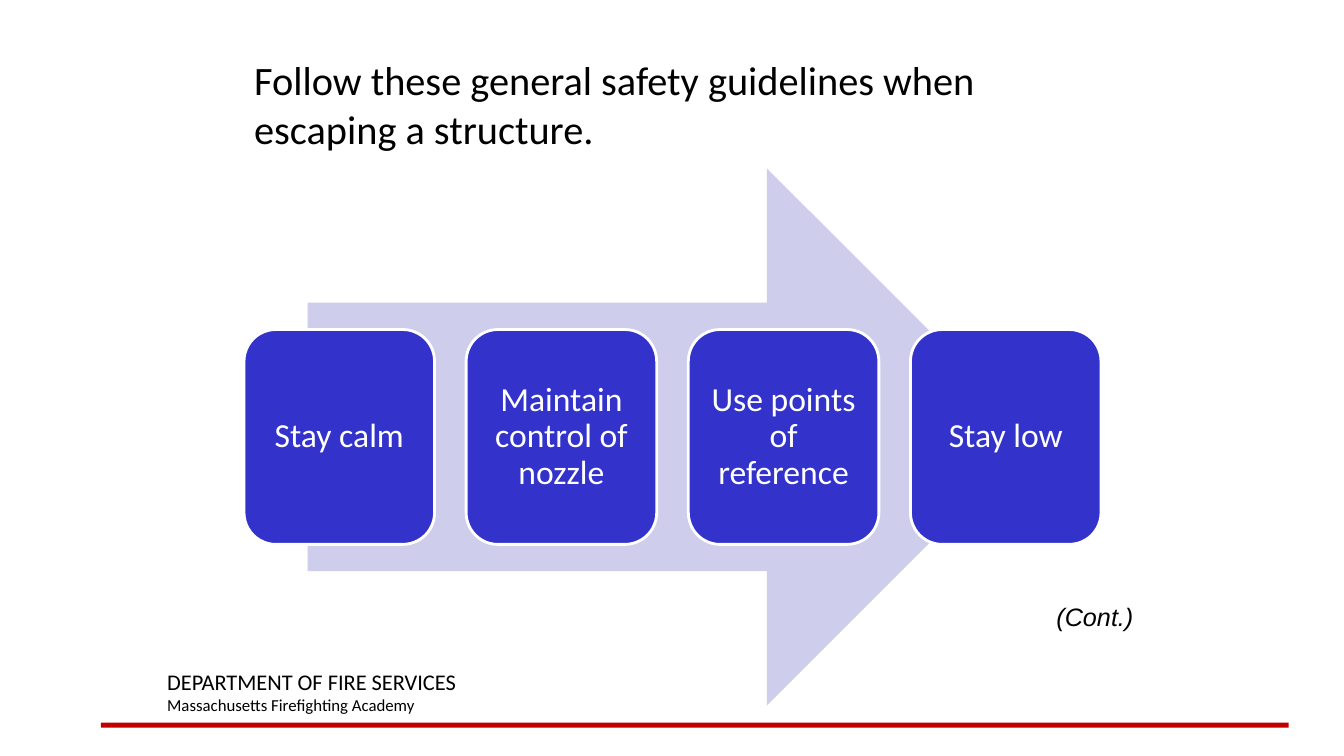
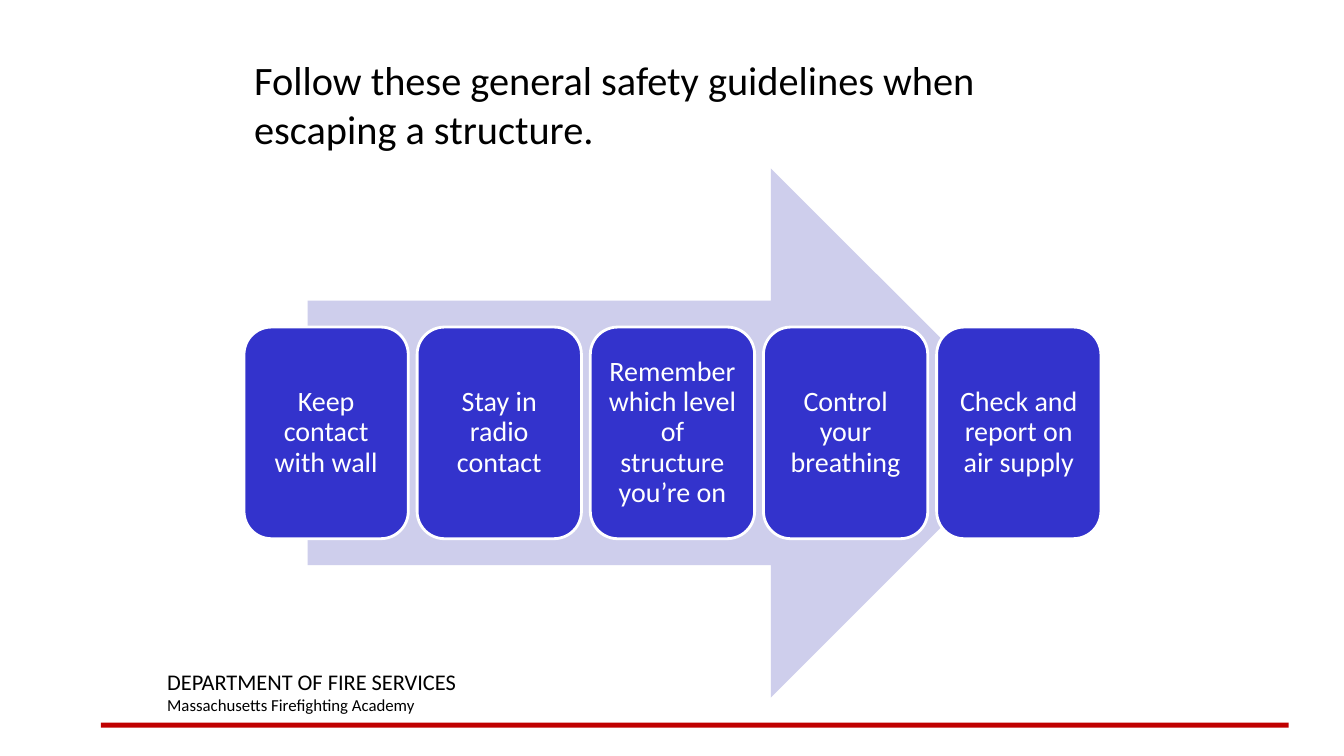
from dataclasses import dataclass

import pptx
import pptx.dml.color
import pptx.enum.shapes
import pptx.enum.text
import pptx.presentation
import pptx.shapes.autoshape
import pptx.slide
import pptx.text.text
import pptx.util

Inches = pptx.util.Inches
Pt = pptx.util.Pt
RGBColor = pptx.dml.color.RGBColor
Shape = pptx.enum.shapes.MSO_SHAPE
Align = pptx.enum.text.PP_ALIGN
Anchor = pptx.enum.text.MSO_ANCHOR
AutoSize = pptx.enum.text.MSO_AUTO_SIZE

BLACK = RGBColor(0x00, 0x00, 0x00)
WHITE = RGBColor(0xFF, 0xFF, 0xFF)
RED = RGBColor(0xC0, 0x00, 0x00)
BLUE = RGBColor(0x33, 0x33, 0xCC)
PALE_BLUE = RGBColor(0xCE, 0xCE, 0xEC)

BODY_FONT = "Calibri"
NOTE_FONT = "Arial"
TITLE = "Follow these general safety guidelines when escaping a structure."
TITLE_ONLY_LAYOUT = 5

ROW_LEFT = 2.42
ROW_WIDTH = 8.5
ARROW_LEFT = 3.05
ARROW_TOP = 1.67
ARROW_WIDTH = 7.22
STEP_HEIGHT_SHARE = 0.4


@dataclass(frozen=True)
class Process:
    """A row of steps, evenly spread over a wide arrow; lengths in inches."""

    steps: tuple[str, ...]
    arrow_height: float
    step_width: float
    inset: float
    font_size: float
    note: str = ""


PROCESSES = (
    Process(
        ("Stay calm", "Maintain control of nozzle", "Use points of reference", "Stay low"),
        arrow_height=5.33, step_width=1.89, inset=0.1, font_size=24, note="(Cont.)",
    ),
    Process(
        (
            "Keep contact with wall",
            "Stay in radio contact",
            "Remember which level of structure you’re on",
            "Control your breathing",
            "Check and report on air supply",
        ),
        arrow_height=5.25, step_width=1.63, inset=0.08, font_size=20,
    ),
)


def format_paragraph(
    para: pptx.text.text._Paragraph,
    size: float,
    color: RGBColor = BLACK,
    font: str = BODY_FONT,
    align: Align = Align.LEFT,
    italic: bool = False,
) -> None:
    para.alignment = align
    for span in para.runs:
        span.font.name = font
        span.font.size = Pt(size)
        span.font.color.rgb = color
        span.font.italic = italic


def add_filled_shape(
    slide: pptx.slide.Slide,
    kind: Shape,
    left: float,
    top: float,
    width: float,
    height: float,
    fill: RGBColor,
) -> pptx.shapes.autoshape.Shape:
    """Add a shape without outline or shadow."""
    shape = slide.shapes.add_shape(
        kind, Inches(left), Inches(top), Inches(width), Inches(height)
    )
    shape.shadow.inherit = False
    shape.fill.solid()
    shape.fill.fore_color.rgb = fill
    shape.line.fill.background()
    return shape


def add_text_box(
    slide: pptx.slide.Slide, left: float, top: float, width: float, height: float, text: str
) -> pptx.text.text.TextFrame:
    box = slide.shapes.add_textbox(
        Inches(left), Inches(top), Inches(width), Inches(height)
    )
    box.text_frame.word_wrap = True
    box.text_frame.text = text
    return box.text_frame


def add_footer(slide: pptx.slide.Slide) -> None:
    add_filled_shape(slide, Shape.RECTANGLE, 1, 7.17, 11.78, 0.05, RED)
    frame = add_text_box(
        slide, 1.56, 6.58, 5.67, 0.57,
        "DEPARTMENT OF FIRE SERVICES\nMassachusetts Firefighting Academy",
    )
    for para, size in zip(frame.paragraphs, (16, 12)):
        format_paragraph(para, size)


def set_title(slide: pptx.slide.Slide) -> None:
    title = slide.shapes.title
    title.left, title.top = Inches(ROW_LEFT), Inches(0.5)
    title.width, title.height = Inches(8.75), Inches(1)
    frame = title.text_frame
    frame.text = TITLE
    frame.word_wrap = True
    frame.auto_size = AutoSize.NONE
    frame.vertical_anchor = Anchor.TOP
    format_paragraph(frame.paragraphs[0], 28.8)


def add_step(
    slide: pptx.slide.Slide, process: Process, text: str, left: float, top: float, height: float
) -> None:
    box = add_filled_shape(
        slide, Shape.ROUNDED_RECTANGLE, left, top, process.step_width, height, BLUE
    )
    box.line.color.rgb = WHITE
    box.line.width = Pt(2)
    frame = box.text_frame
    frame.word_wrap = True
    frame.vertical_anchor = Anchor.MIDDLE
    frame.margin_left = frame.margin_right = Inches(process.inset)
    frame.margin_top = frame.margin_bottom = Inches(process.inset)
    frame.text = text
    para = frame.paragraphs[0]
    para.line_spacing = 0.9
    format_paragraph(para, process.font_size, WHITE, align=Align.CENTER)


def add_process(slide: pptx.slide.Slide, process: Process) -> None:
    add_filled_shape(
        slide, Shape.RIGHT_ARROW,
        ARROW_LEFT, ARROW_TOP, ARROW_WIDTH, process.arrow_height, PALE_BLUE,
    )
    height = process.arrow_height * STEP_HEIGHT_SHARE
    top = ARROW_TOP + (process.arrow_height - height) / 2
    pitch = (ROW_WIDTH - process.step_width) / (len(process.steps) - 1)
    for index, text in enumerate(process.steps):
        add_step(slide, process, text, ROW_LEFT + index * pitch, top, height)


def add_process_slide(deck: pptx.presentation.Presentation, process: Process) -> None:
    slide = deck.slides.add_slide(deck.slide_layouts[TITLE_ONLY_LAYOUT])
    add_footer(slide)
    set_title(slide)
    add_process(slide, process)
    if process.note:
        frame = add_text_box(slide, 9.67, 5.92, 1.67, 0.4, process.note)
        format_paragraph(
            frame.paragraphs[0], 18, font=NOTE_FONT, align=Align.RIGHT, italic=True
        )


def main() -> None:
    deck = pptx.Presentation()
    deck.slide_width, deck.slide_height = Inches(13.33), Inches(7.5)
    for process in PROCESSES:
        add_process_slide(deck, process)
    deck.save("out.pptx")


if __name__ == "__main__":
    main()
